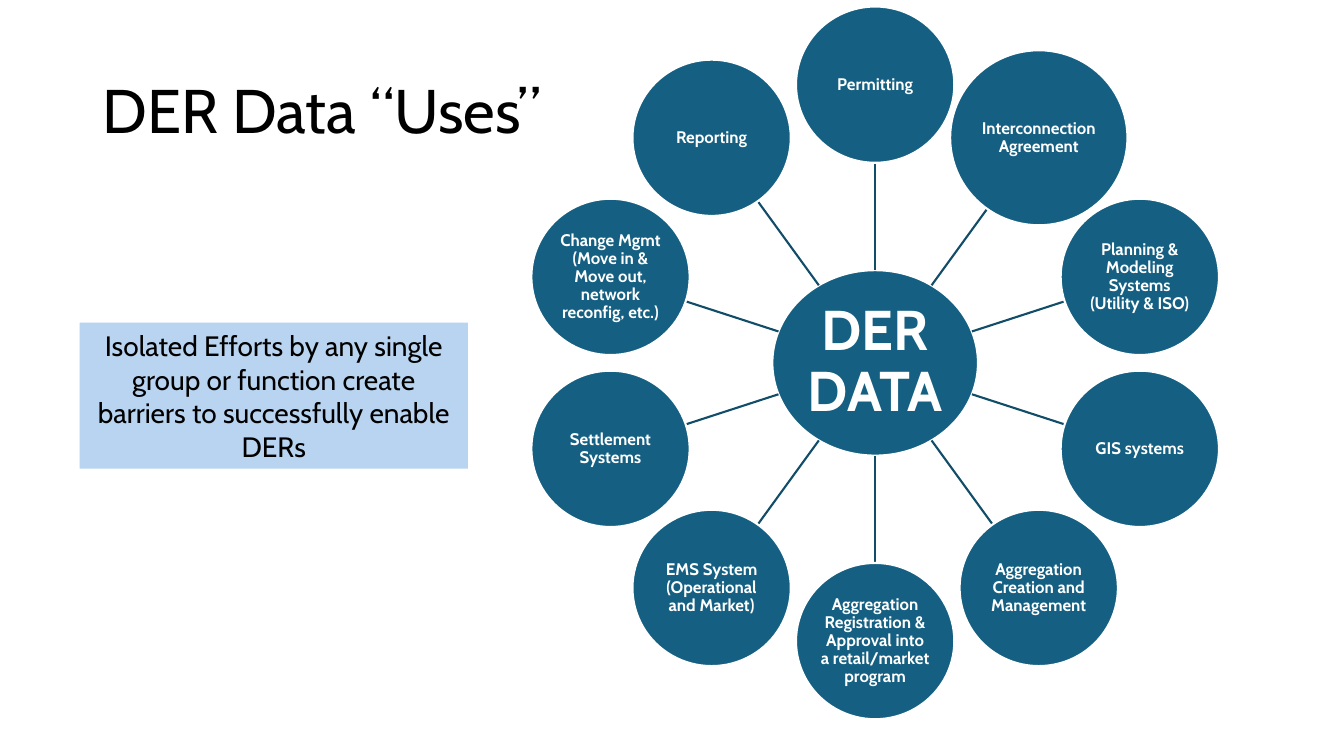
"""Build the DER data uses slide: a hub with ten surrounding uses and a callout."""
import math

from lxml import etree
from pptx import Presentation
from pptx import util as u
from pptx.dml.color import RGBColor
from pptx.enum import shapes, text
from pptx.oxml.ns import qn

TITLE = "DER Data “Uses”"
HUB = "DER DATA"
USES = [
    "Permitting",
    "Interconnection Agreement",
    "Planning & Modeling Systems (Utility & ISO)",
    "GIS systems",
    "Aggregation Creation and Management",
    "Aggregation Registration & Approval into a retail/market program",
    "EMS System (Operational and Market)",
    "Settlement Systems",
    "Change Mgmt (Move in & Move out, network reconfig, etc.)",
    "Reporting",
]
ENLARGED = {"Interconnection Agreement": 1.12}
CALLOUT = ("Isolated Efforts by any single group or function "
           "create barriers to successfully enable DERs")

THEME = {
    "font": "Cabin",
    "disc": "156082", "rim": "FFFFFF", "spoke": "114D68",
    "callout": "B8D4F0", "dark": "000000", "light": "FFFFFF",
    "title_size": 44, "hub_size": 40, "use_size": 12, "callout_size": 20,
    "stroke": 1.5,
}

SLIDE_W, SLIDE_H = u.Inches(13.33), u.Inches(7.5)
COL, ROW = SLIDE_W / 100, SLIDE_H / 100
TITLE_AREA = (6.9, 5.33, 86.9, 19.33)
CALLOUT_AREA = (5.93, 42.67, 28.88, 19.33)
CENTER = (65.12 * COL, 48 * ROW)
HUB_SIZE = (15.3 * COL, 24.53 * ROW)
USE_SIZE = (11.78 * COL, 20.67 * ROW)
RING = 36.8 * ROW


def color(name):
    return RGBColor.from_string(THEME[name])


def area(left, top, width, height):
    return [round(v) for v in (left * COL, top * ROW, width * COL, height * ROW)]


def write(part, words, size, ink, bold=False, inset=None, **layout):
    frame = part.text_frame
    frame.text = words
    frame_format = {"word_wrap": True, "vertical_anchor": text.MSO_ANCHOR.MIDDLE}
    if inset is not None:
        for side in ("left", "top", "right", "bottom"):
            frame_format[f"margin_{side}"] = u.Inches(inset)
    line = frame.paragraphs[0]
    font = line.runs[0].font
    font_format = {"name": THEME["font"], "size": u.Pt(THEME[size]), "bold": bold}
    for target, values in ((frame, frame_format), (line, layout), (font, font_format)):
        for key, value in values.items():
            setattr(target, key, value)
    font.color.rgb = color(ink)


def add_panel(slide, preset, place, fill):
    panel = slide.shapes.add_shape(preset, *place)
    panel.shadow.inherit = False
    panel.fill.solid()
    panel.fill.fore_color.rgb = color(fill)
    panel.line.fill.background()
    return panel


def add_disc(slide, middle, size, words, type_size, inset):
    place = [round(m - s / 2) for m, s in zip(middle, size)] + [round(s) for s in size]
    disc = add_panel(slide, shapes.MSO_SHAPE.OVAL, place, "disc")
    disc.line.color.rgb = color("rim")
    disc.line.width = u.Pt(THEME["stroke"])
    write(disc, words, type_size, "light", bold=True, inset=inset,
          alignment=text.PP_ALIGN.CENTER, line_spacing=0.9)


def point_on_ray(angle, distance):
    return (CENTER[0] + distance * math.sin(angle),
            CENTER[1] - distance * math.cos(angle))


def edge_distance(size, angle):
    return 1 / math.hypot(2 * math.sin(angle) / size[0], 2 * math.cos(angle) / size[1])


def add_spoke(slide, angle, use_size):
    start = point_on_ray(angle, edge_distance(HUB_SIZE, angle))
    end = point_on_ray(angle, RING - edge_distance(use_size, angle))
    spoke = slide.shapes.add_connector(
        shapes.MSO_CONNECTOR.STRAIGHT, *[round(v) for v in start + end])
    spoke.line.color.rgb = color("spoke")
    spoke.line.width = u.Pt(THEME["stroke"])
    etree.SubElement(spoke._element.spPr, qn("a:effectLst"))


def main():
    deck = Presentation()
    deck.slide_width, deck.slide_height = SLIDE_W, SLIDE_H
    slide = deck.slides.add_slide(deck.slide_layouts[6])

    title = slide.shapes.add_textbox(*area(*TITLE_AREA))
    write(title, TITLE, "title_size", "dark", line_spacing=0.9)

    add_disc(slide, CENTER, HUB_SIZE, HUB, "hub_size", 0.03)
    for index, use in enumerate(USES):
        angle = 2 * math.pi * index / len(USES)
        use_size = [side * ENLARGED.get(use, 1) for side in USE_SIZE]
        add_spoke(slide, angle, use_size)
        add_disc(slide, point_on_ray(angle, RING), use_size, use, "use_size", 0.01)

    callout = add_panel(slide, shapes.MSO_SHAPE.RECTANGLE, area(*CALLOUT_AREA), "callout")
    write(callout, CALLOUT, "callout_size", "dark", alignment=text.PP_ALIGN.CENTER)

    deck.save("out.pptx")


if __name__ == "__main__":
    main()
